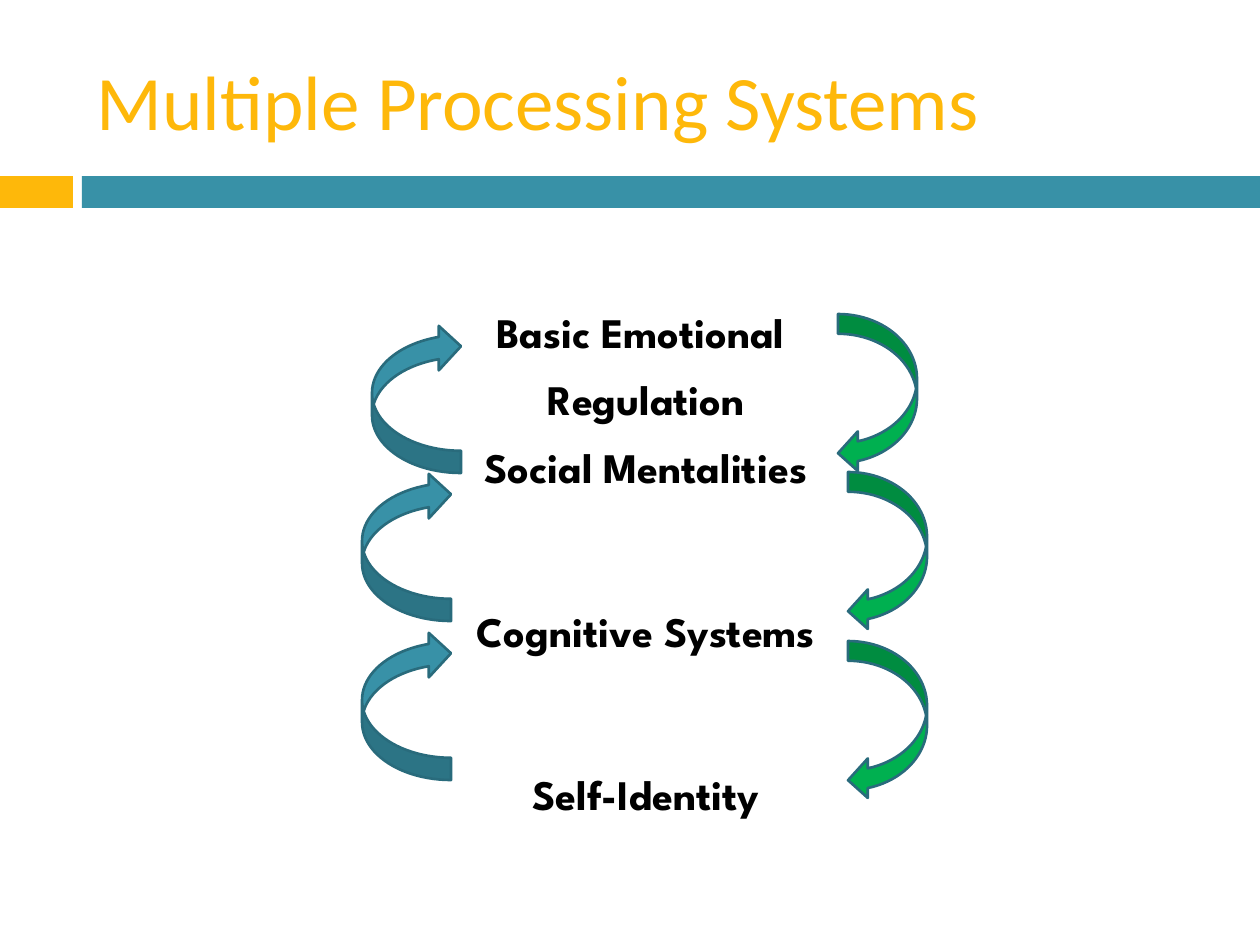
from pptx import Presentation
from pptx import util as u
from pptx.dml.color import RGBColor
from pptx.enum import shapes, text

PX = u.Inches(1) / 126
GOLD, TEAL, GREEN, OUTLINE, BLACK = "FEB80A", "3891A7", "00B050", "296B7C", "000000"


def rgb(value):
    return RGBColor.from_string(value)


def px(*lengths):
    return [round(length * PX) for length in lengths]


class SystemsSlide:
    """Draws styled elements on one title-only slide."""

    def __init__(self, deck):
        self.slide = deck.slides.add_slide(deck.slide_layouts[5])

    def style(self, paragraph, font, size, color, bold=False):
        for run in paragraph.runs:
            run.font.name, run.font.size, run.font.bold = font, u.Pt(size), bold
            run.font.color.rgb = rgb(color)

    def title(self, words, *box):
        heading = self.slide.shapes.title
        heading.left, heading.top, heading.width, heading.height = px(*box)
        frame = heading.text_frame
        frame.text = words
        frame.vertical_anchor = text.MSO_ANCHOR.MIDDLE
        frame.paragraphs[0].alignment = text.PP_ALIGN.LEFT
        self.style(frame.paragraphs[0], "Calibri", 44, GOLD)

    def shape(self, kind, fill, *box, outline=None, rotation=0):
        figure = self.slide.shapes.add_shape(kind, *px(*box))
        figure.shadow.inherit = False
        figure.rotation = rotation
        figure.fill.solid()
        figure.fill.fore_color.rgb = rgb(fill)
        if outline:
            figure.line.color.rgb = rgb(outline)
            figure.line.width = u.Pt(1.5)
        else:
            figure.line.fill.background()

    def arrow(self, fill, *box, rotation=0):
        kind = shapes.MSO_SHAPE.CURVED_LEFT_ARROW
        self.shape(kind, fill, *box, outline=OUTLINE, rotation=rotation)

    def levels(self, lines, *box):
        frame = self.slide.shapes.add_textbox(*px(*box)).text_frame
        frame.word_wrap = True
        frame.text = "\n".join(words for words, _ in lines)
        for level, (_, spacing) in zip(frame.paragraphs, lines):
            level.alignment = text.PP_ALIGN.CENTER
            level.line_spacing = spacing
            level.space_before = u.Pt(7)
            self.style(level, "League Spartan", 24, BLACK, bold=True)


def main():
    deck = Presentation()
    deck.slide_width, deck.slide_height = px(1260, 945)
    page = SystemsSlide(deck)
    page.shape(shapes.MSO_SHAPE.RECTANGLE, GOLD, 0, 176, 73, 32)
    page.shape(shapes.MSO_SHAPE.RECTANGLE, TEAL, 82, 176, 1178, 32)
    page.title("Multiple Processing Systems", 84, 32, 1124, 136)
    page.levels([
        ("Basic Emotional ", 1.1),
        ("Regulation", 1.1),
        ("Social Mentalities", 1.1),
        ("Cognitive Systems", 3.0),
        ("Self-Identity", 3.0),
    ], 84, 295, 1124, 545)
    for left, top in ((838, 314), (848, 472), (848, 641)):
        page.arrow(GREEN, left, top, 79, 159)
    for left, top in ((372, 324), (362, 472), (362, 631)):
        page.arrow(TEAL, left, top, 89, 149, rotation=180)
    deck.save("out.pptx")


if __name__ == "__main__":
    main()
